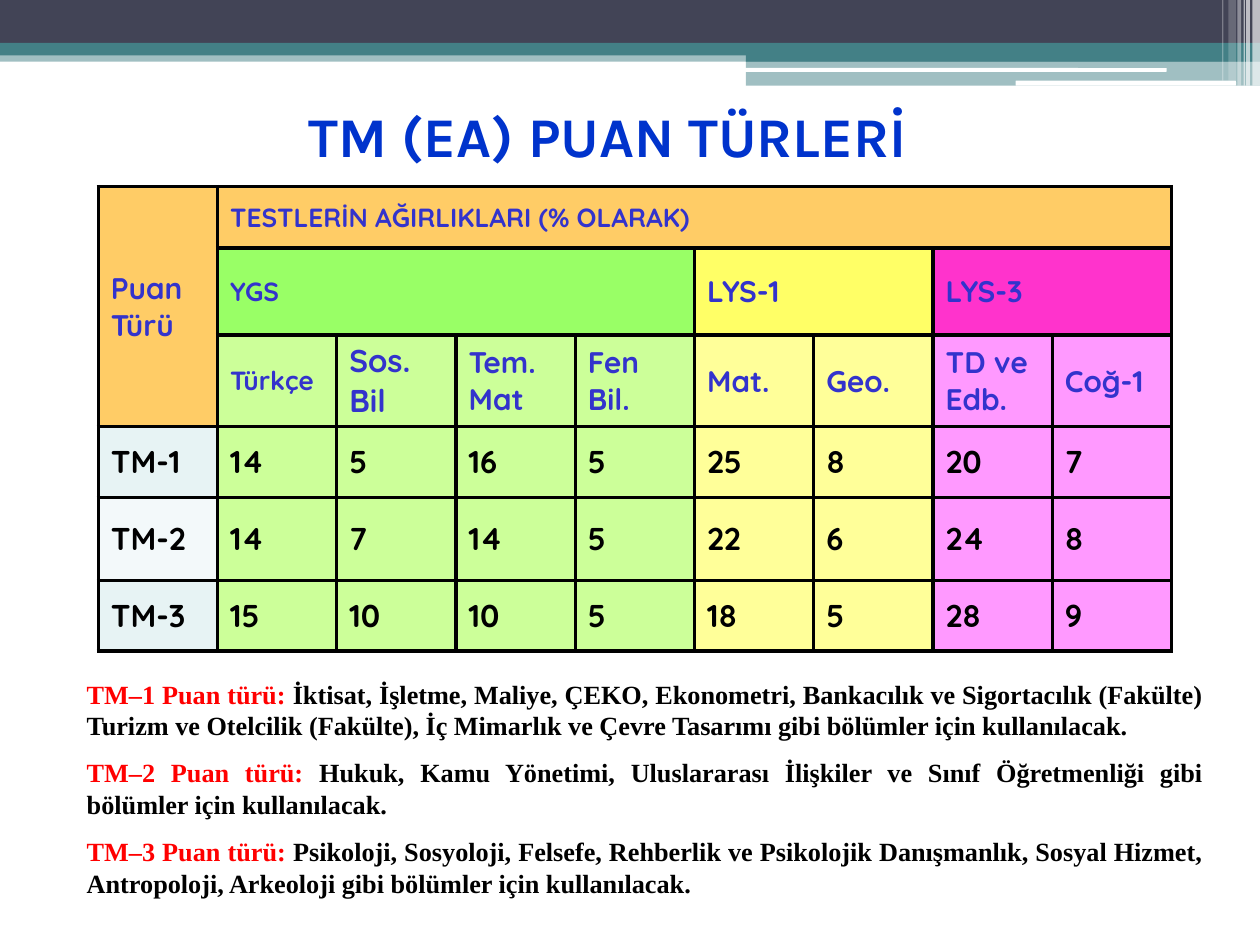
"""Build the slide on TM (EA) score types and their test weights."""
from dataclasses import dataclass

from lxml import etree
from pptx import Presentation
from pptx.dml.color import RGBColor
from pptx.enum.shapes import MSO_SHAPE
from pptx.enum.text import MSO_ANCHOR, MSO_AUTO_SIZE, PP_ALIGN
from pptx.oxml.ns import qn
from pptx.util import Inches, Pt

RECT, ROUND = MSO_SHAPE.RECTANGLE, MSO_SHAPE.ROUNDED_RECTANGLE
MIDDLE, GROW, NO_FIT = MSO_ANCHOR.MIDDLE, MSO_AUTO_SIZE.SHAPE_TO_FIT_TEXT, MSO_AUTO_SIZE.NONE
LEFT, CENTER, JUSTIFY = PP_ALIGN.LEFT, PP_ALIGN.CENTER, PP_ALIGN.JUSTIFY


@dataclass(frozen=True)
class Theme:
    """Colours, fonts and type sizes of the slide."""
    navy: str = "424456"
    teal: str = "438086"
    white: str = "FFFFFF"
    black: str = "000000"
    red: str = "FF0000"
    title: str = "0033CC"
    heading: str = "3333CC"
    orange: str = "FFCC66"
    green: str = "99FF66"
    yellow: str = "FFFF66"
    pink: str = "FF33CC"
    light_green: str = "CCFF99"
    light_yellow: str = "FFFF99"
    light_pink: str = "FF99FF"
    label_fills: tuple = ("E7F3F4", "F3F9FA", "E7F3F4")
    title_font: str = "Karla"
    table_font: str = "Quicksand"
    body_font: str = "Times New Roman"
    title_size: int = 32
    small: int = 15
    medium: int = 17
    large: int = 18
    border: float = 2.25


THEME = Theme()

BANDS = [
    (0, 0.4, 10, 0.09, THEME.teal, 50),
    (0, 0, 10, 0.34, THEME.navy, 100),
    (0, 0.34, 10, 0.1, THEME.teal, 100),
    (5.92, 0.39, 4.08, 0.1, THEME.teal, 100),
    (5.92, 0.48, 4.08, 0.2, THEME.teal, 50),
]
BARS = [(5.91, 0.54, 3.35, 0.03), (8.06, 0.64, 1.75, 0.04)]
STRIPES = [
    (9.94, 0.06, 0.68, 65), (9.89, 0.03, 0.68, 65), (9.87, 0.01, 0.68, 60),
    (9.82, 0.03, 0.68, 40), (9.75, 0.06, 0.64, 20), (9.7, 0.01, 0.64, 30),
]

ROW_HEIGHTS = [0.49, 0.69, 0.71, 0.56, 0.66, 0.56]
GROUPS = [
    (0, 0, 3, 1, "Puan Türü", THEME.medium, THEME.orange),
    (0, 1, 1, 8, "TESTLERİN AĞIRLIKLARI (% OLARAK)", THEME.small, THEME.orange),
    (1, 1, 1, 4, "YGS", THEME.small, THEME.green),
    (1, 5, 1, 2, "LYS-1", THEME.medium, THEME.yellow),
    (1, 7, 1, 2, "LYS-3", THEME.medium, THEME.pink),
]
TESTS = [
    ("Türkçe", THEME.small), ("Sos.\nBil", THEME.large), ("Tem.\nMat", THEME.medium),
    ("Fen Bil.", THEME.medium), ("Mat.", THEME.medium), ("Geo.", THEME.medium),
    ("TD ve Edb.", THEME.medium), ("Coğ-1", THEME.medium),
]
TEST_FILLS = [THEME.light_green] * 4 + [THEME.light_yellow] * 2 + [THEME.light_pink] * 2
WEIGHTS = {
    "TM-1": [14, 5, 16, 5, 25, 8, 20, 7],
    "TM-2": [14, 7, 14, 5, 22, 6, 24, 8],
    "TM-3": [15, 10, 10, 5, 18, 5, 28, 9],
}
NOTES = [
    ("TM–1 Puan türü:", " İktisat, İşletme, Maliye, ÇEKO, Ekonometri, Bankacılık ve Sigortacılık "
     "(Fakülte) Turizm ve Otelcilik (Fakülte), İç Mimarlık ve Çevre Tasarımı gibi bölümler "
     "için kullanılacak."),
    ("TM–2 Puan türü:", " Hukuk, Kamu Yönetimi, Uluslararası İlişkiler ve Sınıf Öğretmenliği "
     "gibi bölümler için kullanılacak."),
    ("TM–3 Puan türü:", " Psikoloji, Sosyoloji, Felsefe, Rehberlik ve Psikolojik Danışmanlık, "
     "Sosyal Hizmet, Antropoloji, Arkeoloji gibi bölümler için kullanılacak."),
]


def rgb(color):
    return RGBColor.from_string(color)


def write(p, text, *, font, size, color, align=LEFT, bold=True):
    p.alignment = align
    r = p.add_run()
    r.text = text
    r.font.name, r.font.size, r.font.bold = font, Pt(size), bold
    r.font.color.rgb = rgb(color)


def place(sp, left, top, width, height):
    sp.left, sp.top, sp.width, sp.height = map(Inches, (left, top, width, height))


class SlideBuilder:
    """Holds the theme and the current slide."""

    def __init__(self, s, theme):
        self.s, self.theme = s, theme

    def band(self, left, top, width, height, color, alpha=100, kind=RECT):
        sp = self.s.shapes.add_shape(kind, *map(Inches, (left, top, width, height)))
        sp.shadow.inherit = False
        sp.fill.solid()
        sp.fill.fore_color.rgb = rgb(color)
        sp.line.fill.background()
        if alpha < 100:
            clr = sp.fill._xPr.find(".//" + qn("a:srgbClr"))
            etree.SubElement(clr, qn("a:alpha"), val=str(alpha * 1000))

    def title(self, text, *box):
        sp = self.s.shapes.title
        place(sp, *box)
        tf = sp.text_frame
        tf.word_wrap, tf.auto_size, tf.vertical_anchor = True, NO_FIT, MIDDLE
        write(tf.paragraphs[0], text, font=self.theme.title_font, size=self.theme.title_size,
              color=self.theme.title, align=CENTER)

    def cell(self, cell, text, size, fill, color):
        cell.vertical_anchor = MIDDLE
        tf = cell.text_frame
        for i, line in enumerate(text.split("\n")):
            p = tf.add_paragraph() if i else tf.paragraphs[0]
            write(p, line, font=self.theme.table_font, size=size, color=color)
        cell.fill.solid()
        cell.fill.fore_color.rgb = rgb(fill)

    def borders(self, cell):
        tc_pr = cell._tc.get_or_add_tcPr()
        for i, side in enumerate(("lnL", "lnR", "lnT", "lnB")):
            ln = etree.Element(qn("a:" + side), w=str(Pt(self.theme.border)))
            fill = etree.SubElement(ln, qn("a:solidFill"))
            etree.SubElement(fill, qn("a:srgbClr"), val=self.theme.black)
            tc_pr.insert(i, ln)

    def table(self, left, top, width):
        t, cols = self.theme, len(TESTS) + 1
        box = map(Inches, (left, top, width, sum(ROW_HEIGHTS)))
        table = self.s.shapes.add_table(len(ROW_HEIGHTS), cols, *box).table
        table.first_row = table.horz_banding = False
        for col in table.columns:
            col.width = Inches(width / cols)
        for row, height in zip(table.rows, ROW_HEIGHTS):
            row.height = Inches(height)
        for r, c, rows, span, text, size, fill in GROUPS:
            table.cell(r, c).merge(table.cell(r + rows - 1, c + span - 1))
            self.cell(table.cell(r, c), text, size, fill, t.heading)
        for c, ((text, size), fill) in enumerate(zip(TESTS, TEST_FILLS), 1):
            self.cell(table.cell(2, c), text, size, fill, t.heading)
        for r, (label, values) in enumerate(WEIGHTS.items(), 3):
            fills = [t.label_fills[r - 3], *TEST_FILLS]
            for c, (value, fill) in enumerate(zip([label, *values], fills)):
                self.cell(table.cell(r, c), str(value), t.large, fill, t.black)
        for cell in table.iter_cells():
            self.borders(cell)

    def notes(self, items, *box):
        t = self.theme
        tf = self.s.shapes.add_textbox(*map(Inches, box)).text_frame
        tf.word_wrap, tf.auto_size = True, GROW
        for i, item in enumerate(items):
            p = tf.add_paragraph() if i else tf.paragraphs[0]
            p.space_before = Pt(9 if i else 0)
            for text, color in zip(item, (t.red, t.black)):
                write(p, text, font=t.body_font, size=t.small, color=color, align=JUSTIFY)


def main():
    prs = Presentation()
    prs.slide_width, prs.slide_height = Inches(10), Inches(7.5)
    slide = SlideBuilder(prs.slides.add_slide(prs.slide_layouts[5]), THEME)
    for band in BANDS:
        slide.band(*band)
    for bar in BARS:
        slide.band(*bar, THEME.white, kind=ROUND)
    for left, width, height, alpha in STRIPES:
        slide.band(left, 0, width, height, THEME.white, alpha)
    slide.title("TM (EA) PUAN TÜRLERİ", 1.5, 0.67, 6.65, 0.8)
    slide.table(0.78, 1.48, 8.52)
    slide.notes(NOTES, 0.59, 5.33, 9.06, 1.89)
    prs.save("out.pptx")


if __name__ == "__main__":
    main()
